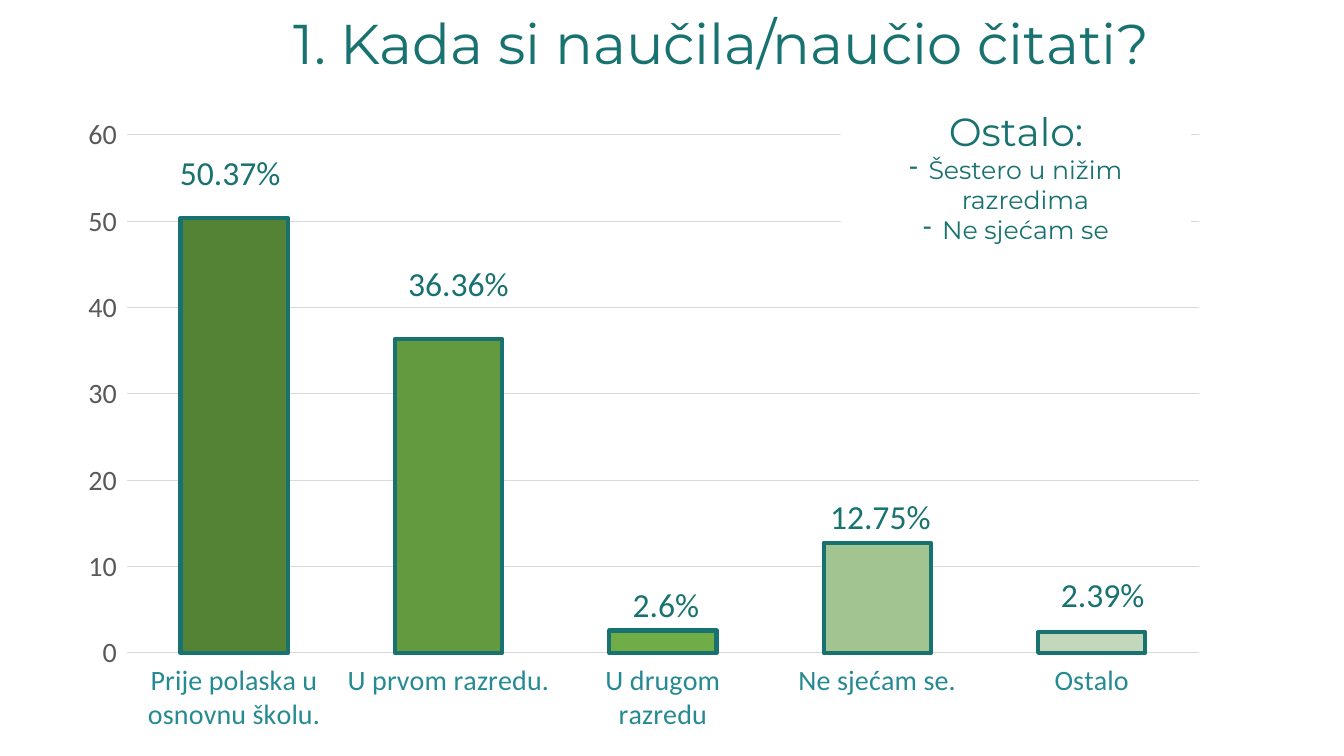
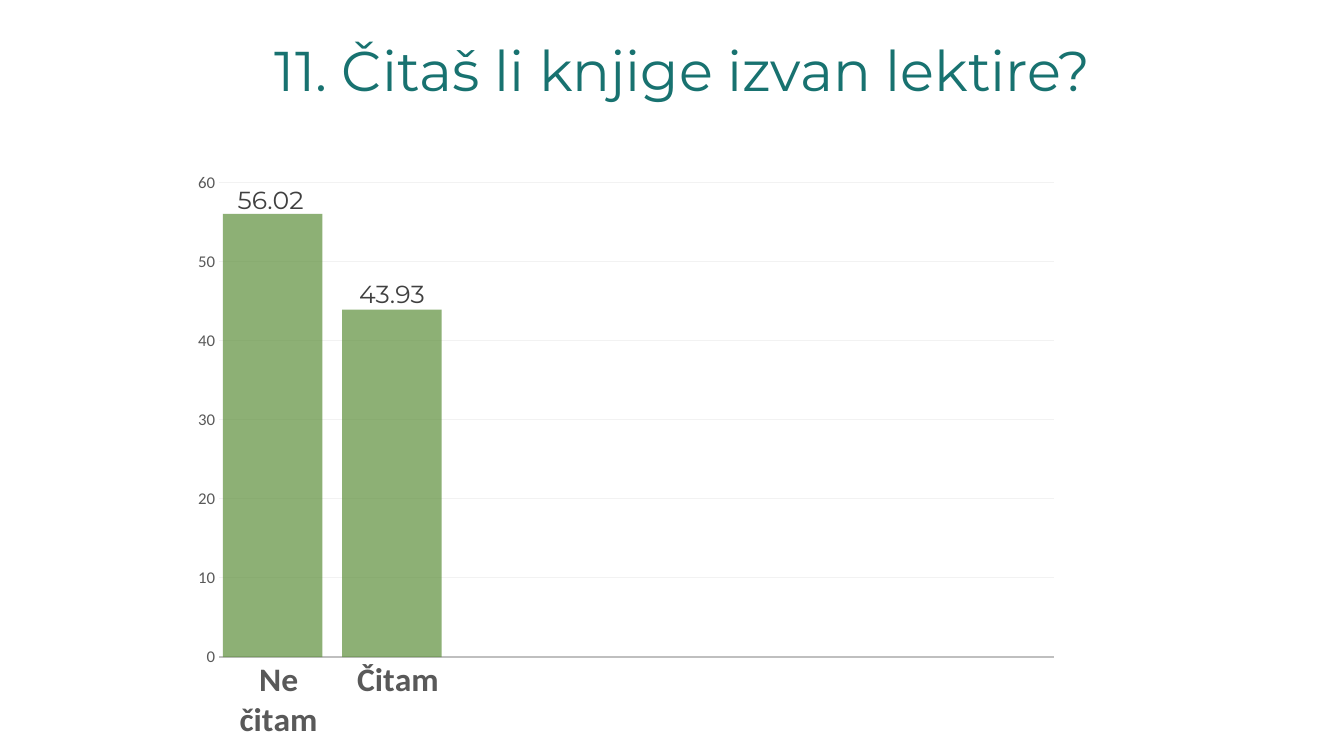
from lxml.etree import SubElement
from pptx import Presentation
from pptx.chart.data import CategoryChartData
from pptx.dml.color import RGBColor
from pptx.enum.chart import XL_CHART_TYPE, XL_LABEL_POSITION, XL_TICK_MARK
from pptx.enum.shapes import MSO_SHAPE
from pptx.enum.text import MSO_ANCHOR, PP_ALIGN
from pptx.oxml import parse_xml
from pptx.oxml.ns import nsdecls, qn
from pptx.util import Emu, Pt

EMU_PER_PX = 914400 / 100.8
COLORS = {
    "white": "FFFFFF", "teal": "187270", "axis_teal": "268A92",
    "grey": "595959", "label_grey": "404040",
    "grid": "D9D9D9", "pale_grid": "F2F2F2", "baseline": "BFBFBF",
    "green_1": "558336", "green_2": "639A3F", "green_3": "70AD47",
    "green_4": "A1C490", "green_5": "C3D8BB",
    "moss": "5D8F3B", "sage": "B4CFA8",
}
NO_LEADER_LINES = (
    f"<c:extLst {nsdecls('c')}><c:ext uri='{{CE6537A1-D6FC-4f65-9D91-7224C49458BB}}' "
    "xmlns:c15='http://schemas.microsoft.com/office/drawing/2012/chart'>"
    "<c15:showLeaderLines val='0'/></c:ext></c:extLst>")


def px(*lengths):
    return [Emu(round(length * EMU_PER_PX)) for length in lengths]


def set_font(font, name, size, color, bold=False):
    values = {"name": name, "size": Pt(size), "bold": bold}
    for attribute, value in values.items():
        setattr(font, attribute, value)
    font.color.rgb = RGBColor.from_string(COLORS[color])


# What each question shows; plot areas and label shifts are px in the chart
questions = [
    {
        "title": "1. Kada si naučila/naučio čitati?",
        "title_box": (142, 0, 1159, 93),
        "chart_box": (27, 114, 1216, 627),
        "plot_area": (100, 21, 1072, 518),
        "answers": ["Prije polaska u osnovnu školu.", "U prvom razredu.",
                    "U drugom razredu", "Ne sjećam se.", "Ostalo"],
        "series": [[50.37, 36.36, 2.6, 12.75, 2.39]],
        "gap": 100, "overlap": 0, "ticks": XL_TICK_MARK.OUTSIDE,
        "answer_font": ("Calibri", 20, "axis_teal"),
        "scale_font": ("Calibri", 20, "grey"),
        "label_font": ("Calibri", 24, "teal"),
        "label_format": '0.0#"%"',
        "label_shifts": [(-4, -19), (10, -29), (3, 0), (3, 0), (11, -11)],
        "grid": "grid", "baseline": None,
    },
    {
        "title": " 11. Čitaš li knjige izvan lektire?",
        "title_box": (96, 0, 1159, 146),
        "chart_box": (149, 123, 918, 618),
        "plot_area": (70, 61, 835, 486),
        "answers": ["Ne čitam", "Čitam"] + [""] * 5,
        "series": [[56.02, 43.93] + [None] * 5, [None] * 7, [None] * 7],
        "gap": 8, "overlap": 94, "ticks": XL_TICK_MARK.NONE,
        "answer_font": ("Calibri", 24, "grey", True),
        "scale_font": ("Calibri", 12, "grey"),
        "label_font": ("Montserrat", 18, "label_grey"),
        "label_format": "0.00",
        "label_shifts": [(-2, 6), (0, 4)],
        "grid": "pale_grid", "baseline": "baseline",
    },
]

presentation = Presentation()
presentation.slide_width, presentation.slide_height = px(1344, 756)
slides, charts = [], []

# Titles and charts
for question in questions:
    slide = presentation.slides.add_slide(presentation.slide_layouts[6])
    slides.append(slide)

    title_box = slide.shapes.add_shape(MSO_SHAPE.RECTANGLE,
                                       *px(*question["title_box"]))
    title_box.shadow.inherit = False
    title_box.fill.solid()
    title_box.fill.fore_color.rgb = RGBColor.from_string(COLORS["white"])
    title_box.line.fill.background()
    title = title_box.text_frame
    title.word_wrap = True
    title.vertical_anchor = MSO_ANCHOR.MIDDLE
    heading = title.paragraphs[0]
    heading.alignment = PP_ALIGN.CENTER
    heading.line_spacing = 0.9
    heading.text = question["title"]
    set_font(heading.runs[0].font, "Montserrat", 40, "teal")

    survey = CategoryChartData()
    survey.categories = question["answers"]
    for number, percentages in enumerate(question["series"], 1):
        survey.add_series(f"Series {number}", percentages)
    chart = slide.shapes.add_chart(XL_CHART_TYPE.COLUMN_CLUSTERED,
                                   *px(*question["chart_box"]), survey).chart
    charts.append(chart)
    chart.has_title = chart.has_legend = False
    set_font(chart.font, *question["scale_font"])
    bars = chart.plots[0]
    bars.vary_by_categories = False
    bars.gap_width, bars.overlap = question["gap"], question["overlap"]

    # Axes
    answer_axis, scale = chart.category_axis, chart.value_axis
    for axis, font in ((answer_axis, "answer_font"), (scale, "scale_font")):
        axis.major_tick_mark = question["ticks"]
        axis.minor_tick_mark = XL_TICK_MARK.NONE
        axis.format.line.fill.background()
        set_font(axis.tick_labels.font, *question[font])
    scale_values = {"minimum_scale": 0, "maximum_scale": 60, "major_unit": 10,
                    "has_major_gridlines": True}
    for attribute, value in scale_values.items():
        setattr(scale, attribute, value)
    gridline = scale.major_gridlines.format.line
    gridline.width = Pt(0.75)
    gridline.color.rgb = RGBColor.from_string(COLORS[question["grid"]])
    if question["baseline"]:
        baseline = answer_axis.format.line
        baseline.width = Pt(1.25)
        baseline.color.rgb = RGBColor.from_string(COLORS[question["baseline"]])

    # Percentages above the bars
    shares = bars.series[0]
    share_labels = shares.data_labels
    label_values = {"show_value": True, "number_format": question["label_format"],
                    "number_format_is_linked": False,
                    "position": XL_LABEL_POSITION.OUTSIDE_END}
    for attribute, value in label_values.items():
        setattr(share_labels, attribute, value)
    set_font(share_labels.font, *question["label_font"])
    for index in range(len(question["label_shifts"])):
        label = shares.points[index].data_label
        set_font(label.font, *question["label_font"])
        label.position = XL_LABEL_POSITION.OUTSIDE_END
    for leader in chart.element.iter(qn("c:showLeaderLines")):
        leader.set("val", "0")
    chart.element.find(".//" + qn("c:dLbls")).append(parse_xml(NO_LEADER_LINES))

    # Fixed places for the plot area and the labels
    plot_area = chart.element.find(".//" + qn("c:plotArea"))
    for automatic in plot_area.findall(qn("c:layout")):
        plot_area.remove(automatic)
    _, _, chart_width, chart_height = question["chart_box"]
    left, top, width, height = question["plot_area"]
    places = [(plot_area, 0, {"layoutTarget": "inner",
                              "xMode": "edge", "yMode": "edge",
                              "x": left / chart_width, "y": top / chart_height,
                              "w": width / chart_width,
                              "h": height / chart_height})]
    for label, (right, down) in zip(chart.element.iter(qn("c:dLbl")),
                                    question["label_shifts"]):
        number_format = parse_xml(f"<c:numFmt {nsdecls('c')} sourceLinked='0'/>")
        number_format.set("formatCode", question["label_format"])
        label.insert(1, number_format)
        places.append((label, 1, {"x": right / chart_width,
                                  "y": down / chart_height}))
    for owner, position, settings in places:
        layout = parse_xml(f"<c:layout {nsdecls('c')}><c:manualLayout/></c:layout>")
        for tag, value in settings.items():
            SubElement(layout[0], qn(f"c:{tag}")).set("val", str(value))
        owner.insert(position, layout)

# Reading age: one shade and a teal outline for each bar
reading_age = charts[0].plots[0].series[0]
for index in range(5):
    bar = reading_age.points[index].format
    bar.fill.solid()
    bar.fill.fore_color.rgb = RGBColor.from_string(COLORS[f"green_{index + 1}"])
    bar.line.width = Pt(3)
    bar.line.color.rgb = RGBColor.from_string(COLORS["teal"])

# Reading for pleasure: see-through greens
for series, color in zip(charts[1].plots[0].series, ("moss", "green_3", "sage")):
    series.format.fill.solid()
    series.format.fill.fore_color.rgb = RGBColor.from_string(COLORS[color])
    shade = series.format.fill._xPr.find(".//" + qn("a:srgbClr"))
    SubElement(shade, qn("a:alpha")).set("val", "70000")

# Note on the other answers
note = slides[0].shapes.add_shape(MSO_SHAPE.RECTANGLE, *px(841, 102, 350, 149))
note.shadow.inherit = False
note.fill.solid()
note.fill.fore_color.rgb = RGBColor.from_string(COLORS["white"])
note.line.fill.background()
note.text_frame.word_wrap = True
note.text_frame.vertical_anchor = MSO_ANCHOR.TOP
note_lines = [("Ostalo:", 28, False), ("Šestero u nižim razredima", 18, True),
              ("Ne sjećam se", 18, True)]
for index, (text, size, bulleted) in enumerate(note_lines):
    line = (note.text_frame.add_paragraph() if index
            else note.text_frame.paragraphs[0])
    line.alignment = PP_ALIGN.CENTER
    line.text = text
    set_font(line.runs[0].font, "Montserrat", size, "teal")
    if bulleted:
        properties = line._p.get_or_add_pPr()
        indent = px(19)[0]
        properties.set("marL", str(indent))
        properties.set("indent", str(-indent))
        SubElement(properties, qn("a:buFontTx"))
        SubElement(properties, qn("a:buChar")).set("char", "-")

presentation.save("out.pptx")
